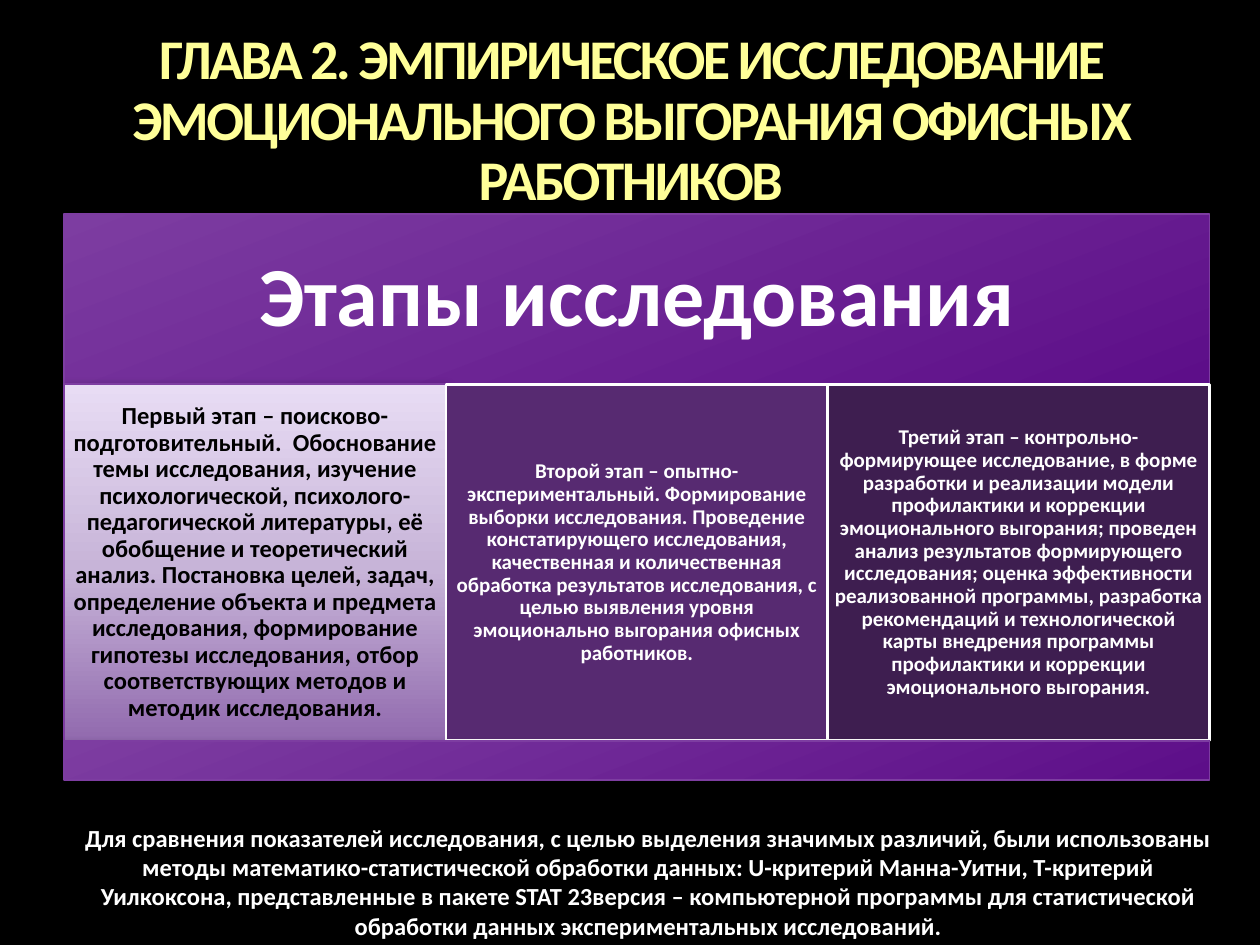
from copy import deepcopy
from lxml.etree import SubElement
from pptx import Presentation
from pptx.dml.color import RGBColor
from pptx.enum.shapes import MSO_SHAPE
from pptx.enum.text import MSO_ANCHOR, MSO_AUTO_SIZE, PP_ALIGN
from pptx.oxml.ns import qn
from pptx.util import Inches, Pt

BLACK = RGBColor(0x00, 0x00, 0x00)
WHITE = RGBColor(0xFF, 0xFF, 0xFF)
YELLOW = RGBColor(0xFF, 0xFF, 0x99)
PURPLE = RGBColor(0x7D, 0x3D, 0xA1)
DEEP_PURPLE = RGBColor(0x5D, 0x0E, 0x89)
LILAC_DARK = RGBColor(0x91, 0x6A, 0xAE)
LILAC = RGBColor(0xC7, 0xB4, 0xD8)
LILAC_LIGHT = RGBColor(0xE8, 0xDC, 0xF4)

LEFT, COLUMN = 0.51, 3.03
HEADER_TOP, CARD_TOP, BASE_TOP, BASE_BOTTOM = 1.7, 3.05, 5.88, 6.19


def write_text(shape, text, size, color, inset=None, anchor=MSO_ANCHOR.TOP, spacing=0.9):
    frame = shape.text_frame
    frame.text = text
    settings = {"word_wrap": True, "auto_size": MSO_AUTO_SIZE.NONE, "vertical_anchor": anchor}
    if inset is not None:
        for side in ("left", "right", "top", "bottom"):
            settings[f"margin_{side}"] = Inches(inset)
    for name, value in settings.items():
        setattr(frame, name, value)
    paragraph = frame.paragraphs[0]
    paragraph.alignment = PP_ALIGN.CENTER
    paragraph.line_spacing = spacing
    font = paragraph.runs[0].font
    for name, value in {"name": "Calibri", "size": Pt(size), "bold": True}.items():
        setattr(font, name, value)
    font.color.rgb = color
    return font


def add_panel(shapes, left, top, width, height, look):
    shape = shapes.add_shape(MSO_SHAPE.RECTANGLE, *map(Inches, (left, top, width, height)))
    shape.shadow.inherit = False
    shape.line.color.rgb = look["line"]
    shape.line.width = Pt(look["weight"])
    properties = shape._element.spPr
    if "stops" in look:
        shape.fill.gradient()
        shape.fill.gradient_angle = look["angle"]
        stop_list = properties.find(qn("a:gradFill")).find(qn("a:gsLst"))
        while len(stop_list) < len(look["stops"]):
            stop_list.append(deepcopy(stop_list[0]))
        for stop, (position, color) in zip(shape.fill.gradient_stops, look["stops"]):
            stop.position = position
            stop.color.rgb = color
        blur, distance, opacity = look["shadow"]
        shadow = SubElement(properties.find(qn("a:effectLst")), qn("a:outerShdw"),
                            blurRad=str(Pt(blur)), dist=str(Pt(distance)),
                            dir="5400000", rotWithShape="0")
        shadow_color = SubElement(shadow, qn("a:srgbClr"), val=str(BLACK))
        SubElement(shadow_color, qn("a:alpha"), val=str(opacity * 1000))
    else:
        shape.fill.solid()
        shape.fill.fore_color.rgb = PURPLE
        fill_color = properties.find(qn("a:solidFill")).find(qn("a:srgbClr"))
        SubElement(fill_color, qn("a:alpha"), val=str(look["opacity"] * 1000))
    return shape


presentation = Presentation()
presentation.slide_width = Inches(10)
presentation.slide_height = Inches(7.5)
slide = presentation.slides.add_slide(presentation.slide_layouts[5])
slide.background.fill.solid()
slide.background.fill.fore_color.rgb = BLACK

title = slide.shapes.title
title.left, title.top, title.width, title.height = map(Inches, (0.42, 0.25, 9.17, 2.42))
title_font = write_text(
    title, "ГЛАВА 2. ЭМПИРИЧЕСКОЕ ИССЛЕДОВАНИЕ ЭМОЦИОНАЛЬНОГО ВЫГОРАНИЯ ОФИСНЫХ РАБОТНИКОВ",
    32, YELLOW, inset=0)
title_font._element.set("spc", "-150")

band = {"stops": [(0, PURPLE), (1, DEEP_PURPLE)], "angle": 291,
        "line": PURPLE, "weight": 1, "shadow": (6, 3, 60)}
header = add_panel(slide.shapes, LEFT, HEADER_TOP, 3 * COLUMN, CARD_TOP - HEADER_TOP, band)
write_text(header, "Этапы исследования", 48, WHITE, 0.2, MSO_ANCHOR.MIDDLE)

stages = [
    ("Первый этап – поисково-подготовительный.  Обоснование темы исследования, изучение "
     "психологической, психолого-педагогической литературы, её обобщение и теоретический "
     "анализ. Постановка целей, задач, определение объекта и предмета исследования, "
     "формирование гипотезы исследования, отбор соответствующих методов и методик исследования.",
     14, BLACK, 0.06,
     {"stops": [(0, LILAC_DARK), (0.48, LILAC), (1, LILAC_LIGHT)], "angle": 90,
      "line": PURPLE, "weight": 1, "shadow": (5, 1, 32)}),
    ("Второй этап – опытно-экспериментальный. Формирование выборки исследования. Проведение "
     "констатирующего исследования, качественная и количественная обработка результатов "
     "исследования, с целью выявления уровня эмоционально выгорания офисных работников.",
     12, WHITE, 0.05, {"opacity": 70, "line": WHITE, "weight": 1.5}),
    ("Третий этап – контрольно- формирующее исследование, в форме разработки и реализации "
     "модели профилактики и коррекции эмоционального выгорания; проведен анализ результатов "
     "формирующего исследования; оценка эффективности реализованной программы, разработка "
     "рекомендаций и технологической карты внедрения программы профилактики и коррекции "
     "эмоционального выгорания.",
     12, WHITE, 0.05, {"opacity": 50, "line": WHITE, "weight": 1.5}),
]
for index, (text, size, color, inset, look) in enumerate(stages):
    card = add_panel(slide.shapes, LEFT + index * COLUMN, CARD_TOP,
                     COLUMN, BASE_TOP - CARD_TOP, look)
    write_text(card, text, size, color, inset, MSO_ANCHOR.MIDDLE)

add_panel(slide.shapes, LEFT, BASE_TOP, 3 * COLUMN, BASE_BOTTOM - BASE_TOP, band)

methods = slide.shapes.add_textbox(*map(Inches, (0.5, 6.48, 9.29, 1.04)))
write_text(
    methods,
    "Для сравнения показателей исследования, с целью выделения значимых различий, были "
    "использованы методы математико-статистической обработки данных: U-критерий Манна-Уитни, "
    "Т-критерий Уилкоксона, представленные в пакете STAT 23версия – компьютерной программы "
    "для статистической обработки данных экспериментальных исследований.",
    14, WHITE, spacing=1.0)

presentation.save("out.pptx")
